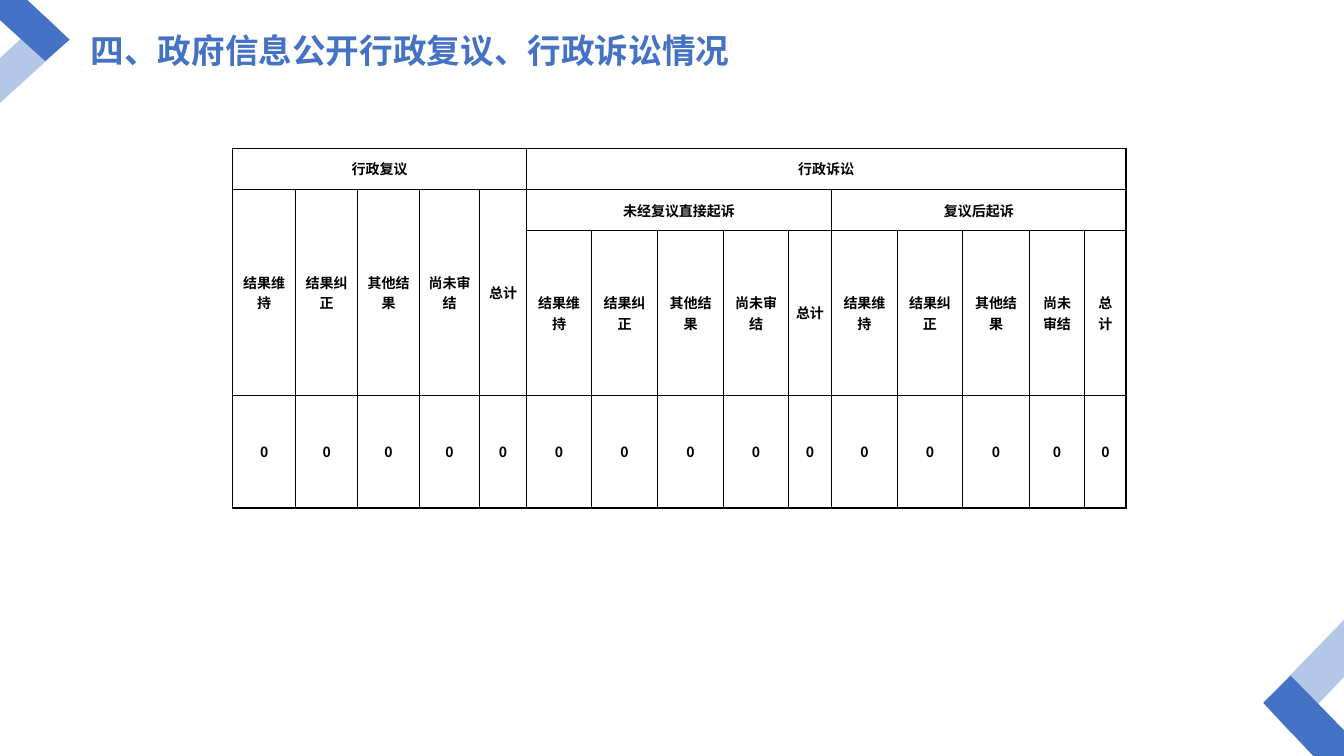
import pptx
import pptx.dml.color
import pptx.enum.text
import pptx.oxml
import pptx.oxml.ns
import pptx.util

Inches = pptx.util.Inches
RGBColor = pptx.dml.color.RGBColor
BLUE = RGBColor(0x44, 0x72, 0xC4)
LIGHT_BLUE = RGBColor(0xB4, 0xC7, 0xE7)
BLACK = RGBColor(0, 0, 0)
BORDER = RGBColor(0x08, 0, 0)
FONT = "Noto Sans CJK SC"

TOP_LEFT = [
    (LIGHT_BLUE, [(0, 0.58), (0.66, 0.17), (1, 0.39), (0, 1)]),
    (BLUE, [(0, 0), (0.38, 0), (1, 0.39), (0.66, 0.59), (0, 0.19)]),
]
BOTTOM_RIGHT = [
    (LIGHT_BLUE, [(1, 0.42), (0.34, 0.83), (0, 0.61), (1, 0)]),
    (BLUE, [(1, 1), (0.62, 1), (0, 0.61), (0.34, 0.41), (1, 0.81)]),
]

COLUMN_WIDTHS = [0.62, 0.62, 0.61, 0.6, 0.46,
                 0.65, 0.65, 0.66, 0.64, 0.43,
                 0.65, 0.65, 0.66, 0.55, 0.41]
ROW_HEIGHTS = [0.41, 0.41, 1.63, 1.12]
OUTCOMES = ["结果维持", "结果纠正", "其他结果", "尚未审结", "总计"]
GROUP = len(OUTCOMES)
HEADINGS = [
    (0, 0, GROUP, "行政复议"),
    (0, GROUP, 2 * GROUP, "行政诉讼"),
    (1, GROUP, GROUP, "未经复议直接起诉"),
    (1, 2 * GROUP, GROUP, "复议后起诉"),
]
RESULTS = [0] * len(COLUMN_WIDTHS)


def style_text(paragraph, size, color):
    for run in paragraph.runs:
        font = run.font
        font.size = pptx.util.Pt(size)
        font.bold = True
        font.name = FONT
        font.color.rgb = color
        east_asian = pptx.oxml.parse_xml(
            f'<a:ea {pptx.oxml.ns.nsdecls("a")} typeface="{FONT}"/>')
        font._element.find(pptx.oxml.ns.qn("a:latin")).addnext(east_asian)


def add_corner(slide, box, bands):
    left, top, width, height = box
    for color, shares in bands:
        points = [(Inches(left + x * width), Inches(top + y * height)) for x, y in shares]
        builder = slide.shapes.build_freeform(*points[0])
        builder.add_line_segments(points[1:], close=True)
        shape = builder.convert_to_shape()
        shape.shadow.inherit = False
        shape.fill.solid()
        shape.fill.fore_color.rgb = color
        shape.line.fill.background()


def add_title(slide, box, text):
    text_frame = slide.shapes.add_textbox(*map(Inches, box)).text_frame
    text_frame.word_wrap = True
    text_frame.vertical_anchor = pptx.enum.text.MSO_ANCHOR.MIDDLE
    text_frame.margin_left = text_frame.margin_right = 0
    text_frame.text = text
    style_text(text_frame.paragraphs[0], 24, BLUE)


def style_cell(cell):
    cell.fill.background()
    cell.margin_left = cell.margin_right = Inches(0.07)
    cell.margin_top = cell.margin_bottom = 0
    cell.vertical_anchor = pptx.enum.text.MSO_ANCHOR.MIDDLE
    paragraph = cell.text_frame.paragraphs[0]
    paragraph.alignment = pptx.enum.text.PP_ALIGN.CENTER
    style_text(paragraph, 10, BLACK)
    properties = cell._tc.get_or_add_tcPr()
    for position, side in enumerate("LRTB"):
        properties.insert(position, pptx.oxml.parse_xml(
            f'<a:ln{side} {pptx.oxml.ns.nsdecls("a")} w="12700"><a:solidFill>'
            f'<a:srgbClr val="{BORDER}"/></a:solidFill></a:ln{side}>'))


def add_case_table(slide, left, top):
    table = slide.shapes.add_table(
        len(ROW_HEIGHTS), len(COLUMN_WIDTHS), Inches(left), Inches(top),
        Inches(sum(COLUMN_WIDTHS)), Inches(sum(ROW_HEIGHTS))).table
    table.first_row = table.horz_banding = False
    for column, width in zip(table.columns, COLUMN_WIDTHS):
        column.width = Inches(width)
    for row, height in zip(table.rows, ROW_HEIGHTS):
        row.height = Inches(height)
    for row, column, span, text in HEADINGS:
        table.cell(row, column).merge(table.cell(row, column + span - 1))
        table.cell(row, column).text = text
    for column, result in enumerate(RESULTS):
        outcome_row = 1 if column < GROUP else 2
        if outcome_row == 1:
            table.cell(1, column).merge(table.cell(2, column))
        table.cell(outcome_row, column).text = OUTCOMES[column % GROUP]
        table.cell(3, column).text = str(result)
    for cell in table.iter_cells():
        style_cell(cell)


def main():
    presentation = pptx.Presentation()
    presentation.slide_width = Inches(13.33)
    presentation.slide_height = Inches(7.5)
    slide = presentation.slides.add_slide(presentation.slide_layouts[6])
    add_corner(slide, (-0.02, -0.02, 0.71, 1.06), TOP_LEFT)
    add_corner(slide, (12.53, 6.15, 0.8, 1.35), BOTTOM_RIGHT)
    add_title(slide, (0.9, 0.29, 6.9, 0.42), "四、政府信息公开行政复议、行政诉讼情况")
    add_case_table(slide, 2.31, 1.47)
    presentation.save("out.pptx")


if __name__ == "__main__":
    main()
